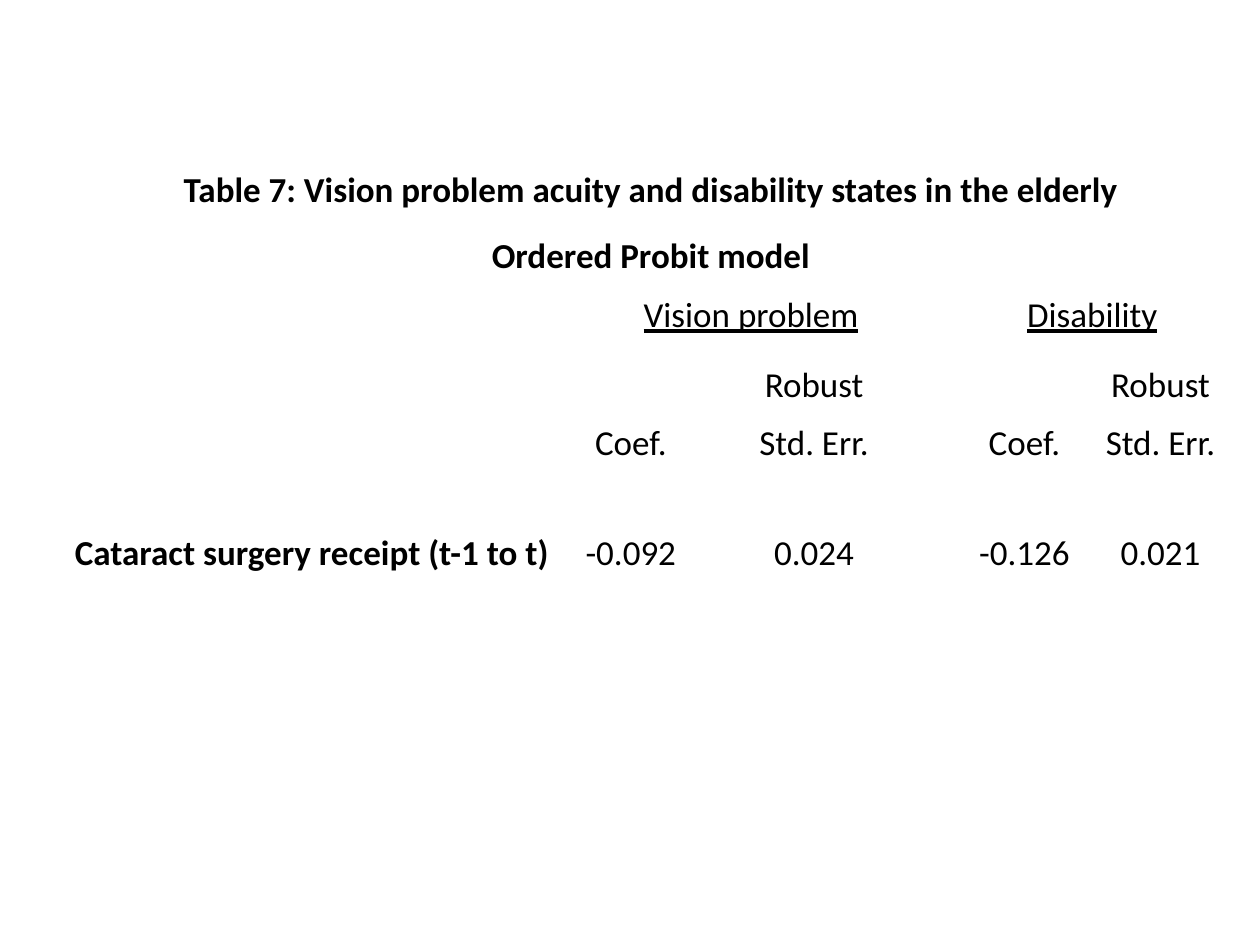
from dataclasses import dataclass

from lxml import etree
from pptx import Presentation
from pptx.dml.color import RGBColor
from pptx.enum.text import MSO_ANCHOR, PP_ALIGN
from pptx.oxml.ns import qn
from pptx.util import Pt

CENTER, LEFT = PP_ALIGN.CENTER, PP_ALIGN.LEFT
MIDDLE = MSO_ANCHOR.MIDDLE


@dataclass(frozen=True)
class Theme:
    font: str = "Calibri"
    size: int = 20
    text: str = "000000"
    border: str = "FFFFFF"


THEME = Theme()


def write(cell, text, bold=False, underline=False, align=CENTER):
    paragraph = cell.text_frame.paragraphs[0]
    paragraph.alignment = align
    run = paragraph.add_run()
    run.text = text
    run.font.name = THEME.font
    run.font.size = Pt(THEME.size)
    run.font.color.rgb = RGBColor.from_string(THEME.text)
    run.font.bold = bold
    run.font.underline = underline


def style_cell(cell, bottom_width=1):
    """Clear the fill, tighten the margins and draw the four borders."""
    cell.fill.background()
    cell.vertical_anchor = MIDDLE
    cell.margin_left = cell.margin_right = cell.margin_top = Pt(0.75)
    cell.margin_bottom = Pt(0)
    properties = cell._tc.get_or_add_tcPr()
    widths = {"a:lnL": 1, "a:lnR": 1, "a:lnT": 1, "a:lnB": bottom_width}
    for position, (side, width) in enumerate(widths.items()):
        line = etree.Element(qn(side), w=str(Pt(width)))
        fill = etree.SubElement(line, qn("a:solidFill"))
        etree.SubElement(fill, qn("a:srgbClr"), val=THEME.border)
        properties.insert(position, line)


prs = Presentation()
prs.slide_width, prs.slide_height = Pt(720), Pt(540)
slide = prs.slides.add_slide(prs.slide_layouts[6])

column_widths = [282.5, 72, 137.5, 12.5, 78, 77.5]
row_heights = [49.5, 26, 41, 39.5, 26, 100]
table = slide.shapes.add_table(
    len(row_heights), len(column_widths),
    Pt(42), Pt(84), Pt(sum(column_widths)), Pt(sum(row_heights)),
).table
table.first_row = table.horz_banding = False
for column, width in zip(table.columns, column_widths):
    column.width = Pt(width)
for row, height in zip(table.rows, row_heights):
    row.height = Pt(height)

for row_number, row in enumerate(table.rows):
    for cell in row.cells:
        style_cell(cell, bottom_width=3 if row_number == 0 else 1)

titles = [
    "Table 7: Vision problem acuity and disability states in the elderly",
    "Ordered Probit model",
]
for row_number, title in enumerate(titles):
    table.cell(row_number, 0).merge(table.cell(row_number, 5))
    write(table.cell(row_number, 0), title, bold=True)

write(table.cell(5, 0), "Cataract surgery receipt (t-1 to t)", bold=True, align=LEFT)

outcomes = [
    (1, "Vision problem", "-0.092", "0.024"),
    (4, "Disability", "-0.126", "0.021"),
]
for first, outcome, coefficient, error in outcomes:
    table.cell(2, first).merge(table.cell(2, first + 1))
    write(table.cell(2, first), outcome, underline=True)
    write(table.cell(3, first + 1), "Robust")
    write(table.cell(4, first), "Coef.")
    write(table.cell(4, first + 1), "Std. Err.")
    write(table.cell(5, first), coefficient)
    write(table.cell(5, first + 1), error)

prs.save("out.pptx")
